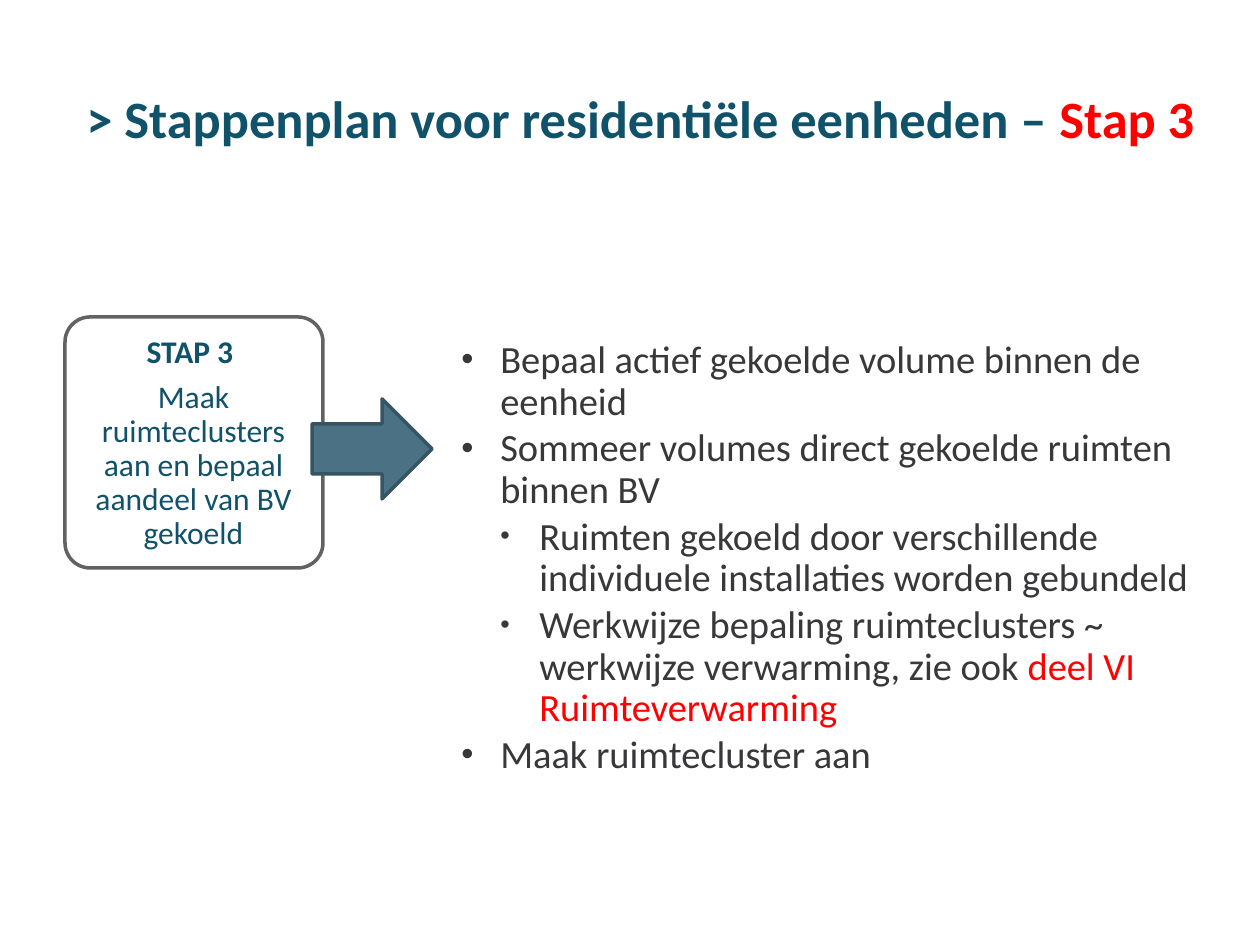
from dataclasses import dataclass

from lxml.etree import SubElement
from pptx import Presentation
from pptx.dml.color import RGBColor
from pptx.enum.shapes import MSO_SHAPE
from pptx.enum.text import MSO_ANCHOR, PP_ALIGN
from pptx.oxml.ns import qn
from pptx.util import Emu, Pt

EMU_PER_PX = 914400 / 126


@dataclass(frozen=True)
class Theme:
    face: str = "Calibri"
    heading: str = "105269"
    body: str = "38373A"
    accent: str = "FF0000"
    card: str = "FFFFFF"
    card_border: str = "616264"
    arrow: str = "4B7284"
    arrow_border: str = "375462"
    title_size: int = 30
    body_size: int = 22
    step_size: int = 18


THEME = Theme()
INDENT = 39
BULLET_PERCENT = (90, 70)

BULLETS = [
    (0, [("Bepaal actief gekoelde volume binnen de eenheid", THEME.body)]),
    (0, [("Sommeer volumes direct gekoelde ruimten binnen BV", THEME.body)]),
    (1, [("Ruimten gekoeld door verschillende individuele installaties worden gebundeld", THEME.body)]),
    (1, [("Werkwijze bepaling ruimteclusters ~ werkwijze verwarming, zie ook ", THEME.body),
         ("deel VI Ruimteverwarming", THEME.accent)]),
    (0, [("Maak ruimtecluster aan", THEME.body)]),
]


def px(length):
    return Emu(round(length * EMU_PER_PX))


def apply_format(target, values):
    for attribute, value in values.items():
        setattr(target, attribute, value)


def add_text_frame(slide, left, top, width, height, **frame_format):
    frame = slide.shapes.add_textbox(px(left), px(top), px(width), px(height)).text_frame
    apply_format(frame, {"word_wrap": True, **frame_format})
    return frame


def add_paragraph(frame, position, **paragraph_format):
    paragraph = frame.paragraphs[0] if position == 0 else frame.add_paragraph()
    apply_format(paragraph, paragraph_format)
    return paragraph


def add_run(paragraph, words, size, color, bold=False):
    run = paragraph.add_run()
    run.text = words
    apply_format(run.font, {"name": THEME.face, "size": Pt(size), "bold": bold})
    run.font.color.rgb = RGBColor.from_string(color)


def add_bullet(paragraph, level):
    properties = paragraph._p.get_or_add_pPr()
    properties.set("marL", str(px(INDENT * (level + 1))))
    properties.set("indent", str(-px(INDENT)))
    SubElement(properties, qn("a:buSzPct"), val=str(BULLET_PERCENT[level] * 1000))
    SubElement(properties, qn("a:buFont"), typeface="Arial")
    SubElement(properties, qn("a:buChar"), char="•")


def add_block(slide, preset, left, top, width, height, fill, border):
    block = slide.shapes.add_shape(preset, px(left), px(top), px(width), px(height))
    block.shadow.inherit = False
    block.fill.solid()
    block.fill.fore_color.rgb = RGBColor.from_string(fill)
    block.line.color.rgb = RGBColor.from_string(border)
    block.line.width = Pt(2)
    return block


def add_title(slide):
    frame = add_text_frame(slide, 74, 76, 1150, 149)
    title = add_paragraph(frame, 0, line_spacing=Pt(38))
    add_run(title, "> Stappenplan voor residentiële eenheden – ", THEME.title_size, THEME.heading, True)
    add_run(title, "Stap 3", THEME.title_size, THEME.accent, True)


def add_bullet_list(slide):
    frame = add_text_frame(slide, 449, 334, 795, 586)
    for position, (level, pieces) in enumerate(BULLETS):
        paragraph = add_paragraph(frame, position, level=level)
        add_bullet(paragraph, level)
        apply_format(paragraph, {"line_spacing": 0.9, "space_before": Pt(3 if position else 0)})
        for words, color in pieces:
            add_run(paragraph, words, THEME.body_size, color)


def add_step_card(slide):
    card = add_block(slide, MSO_SHAPE.ROUNDED_RECTANGLE, 65, 317, 258, 251, THEME.card, THEME.card_border)
    card.adjustments[0] = 0.1
    sides = ("left", "top", "right", "bottom")
    insets = {f"margin_{side}": px(9) for side in sides}
    frame = add_text_frame(slide, 72, 325, 243, 237, vertical_anchor=MSO_ANCHOR.MIDDLE, **insets)
    lines = [("STAP 3 ", True), ("Maak ruimteclusters aan en bepaal aandeel van BV gekoeld", False)]
    for position, (words, bold) in enumerate(lines):
        paragraph = add_paragraph(frame, position, alignment=PP_ALIGN.CENTER,
                                  line_spacing=0.9, space_after=Pt(6.3))
        add_run(paragraph, words, THEME.step_size, THEME.heading, bold)


def main():
    presentation = Presentation()
    apply_format(presentation, {"slide_width": px(1260), "slide_height": px(945)})
    slide = presentation.slides.add_slide(presentation.slide_layouts[6])
    add_bullet_list(slide)
    add_title(slide)
    add_step_card(slide)
    add_block(slide, MSO_SHAPE.RIGHT_ARROW, 312, 399, 120, 100, THEME.arrow, THEME.arrow_border)
    presentation.save("out.pptx")


if __name__ == "__main__":
    main()
